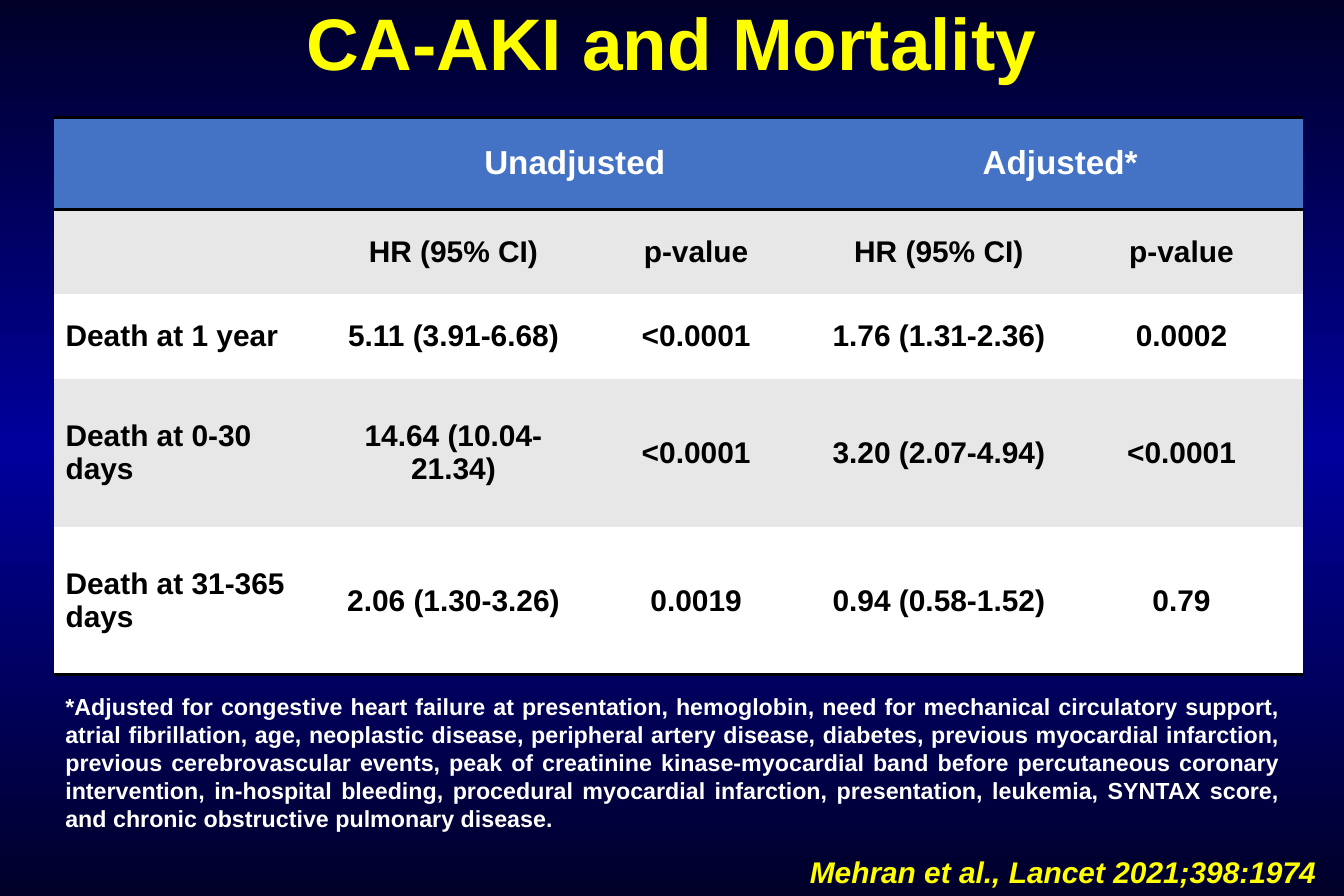
"""Build the slide on CA-AKI and mortality."""
from copy import deepcopy

from lxml.etree import SubElement
from pptx import Presentation
from pptx.dml.color import RGBColor as Rgb
from pptx.enum.text import MSO_VERTICAL_ANCHOR as Anchor, PP_PARAGRAPH_ALIGNMENT as Align
from pptx.oxml.ns import qn
from pptx.util import Cm, Pt

COLOURS = {
    "edge": "000028",
    "middle": "00009C",
    "yellow": "FFFF00",
    "white": "FFFFFF",
    "black": "000000",
    "header": "4472C4",
    "band": "E7E7E7",
}
NO_STYLE = "{2D5ABB26-0587-4C30-8999-92F81FD0307C}"
COLUMN_WIDTHS = [5.92] + [5.16] * 4
ROW_HEIGHTS = [1.96, 1.8, 1.8, 3.15, 3.15]
ROWS = [
    ["", "Unadjusted", "", "Adjusted*", ""],
    ["", "HR (95% CI)", "p-value", "HR (95% CI)", "p-value"],
    ["Death at 1 year", "5.11 (3.91-6.68)", "<0.0001", "1.76 (1.31-2.36)", "0.0002"],
    ["Death at 0-30 days", "14.64 (10.04-21.34)", "<0.0001", "3.20 (2.07-4.94)", "<0.0001"],
    ["Death at 31-365 days", "2.06 (1.30-3.26)", "0.0019", "0.94 (0.58-1.52)", "0.79"],
]
FOOTNOTE = (
    "*Adjusted for congestive heart failure at presentation, hemoglobin, need for "
    "mechanical circulatory support, atrial fibrillation, age, neoplastic disease, "
    "peripheral artery disease, diabetes, previous myocardial infarction, previous "
    "cerebrovascular events, peak of creatinine kinase-myocardial band before "
    "percutaneous coronary intervention, in-hospital bleeding, procedural myocardial "
    "infarction, presentation, leukemia, SYNTAX score, and chronic obstructive "
    "pulmonary disease."
)


def colour(name):
    """Return the named colour."""
    return Rgb.from_string(COLOURS[name])


def paint_background(page):
    """Fill the page with a vertical gradient, brightest halfway down."""
    fill = page.background.fill
    fill.gradient()
    fill.gradient_angle = 90
    stop_list = next(page.element.iter(qn("a:gsLst")))
    stop_list.append(deepcopy(stop_list[0]))
    for stop, position, name in zip(
        fill.gradient_stops, (0, 0.5, 1), ("edge", "middle", "edge")
    ):
        stop.position = position
        stop.color.rgb = colour(name)


def add_span(para, text, size, name, align, italic=False):
    """Add one bold run to a paragraph and align the paragraph."""
    para.alignment = align
    span = para.add_run()
    span.text = text
    font = span.font
    font.name, font.size, font.bold, font.italic = "Arial", Pt(size), True, italic
    font.color.rgb = colour(name)


def add_text(page, place, text, size, name, align, italic=False):
    """Add a wrapped text box and return its text frame."""
    frame = page.shapes.add_textbox(*map(Cm, place)).text_frame
    frame.word_wrap = True
    add_span(frame.paragraphs[0], text, size, name, align, italic)
    return frame


def add_border(cell, side):
    """Draw a black rule on one side of a cell."""
    line = SubElement(cell._tc.get_or_add_tcPr(), qn(f"a:{side}"), w=str(Pt(2)))
    fill = SubElement(line, qn("a:solidFill"))
    SubElement(fill, qn("a:srgbClr"), val=COLOURS["black"])


def style_cell(cell, row, column, text):
    """Give a cell its rules, fill and text."""
    if row == 0:
        add_border(cell, "lnT")
    if row in (0, len(ROWS) - 1):
        add_border(cell, "lnB")
    cell.fill.solid()
    banding = "band" if row % 2 else "white"
    cell.fill.fore_color.rgb = colour(banding if row else "header")
    cell.vertical_anchor = Anchor.MIDDLE
    if text:
        size, name = (18, "black") if row else (20, "white")
        align = Align.CENTER if column else Align.LEFT
        add_span(cell.text_frame.paragraphs[0], text, size, name, align)


def add_hazard_table(page):
    """Add the table of hazard ratios."""
    place = (1.14, 2.49, sum(COLUMN_WIDTHS), sum(ROW_HEIGHTS))
    frame = page.shapes.add_table(len(ROWS), len(COLUMN_WIDTHS), *map(Cm, place))
    table = frame.table
    table.horz_banding = False
    next(table._tbl.iter(qn("a:tableStyleId"))).text = NO_STYLE
    for column, width in zip(table.columns, COLUMN_WIDTHS):
        column.width = Cm(width)
    for row, height in zip(table.rows, ROW_HEIGHTS):
        row.height = Cm(height)
    for first in (1, 3):
        table.cell(0, first).merge(table.cell(0, first + 1))
    for row, texts in enumerate(ROWS):
        for column, text in enumerate(texts):
            style_cell(table.cell(row, column), row, column, text)


def main():
    """Build and save the deck."""
    deck = Presentation()
    deck.slide_width, deck.slide_height = Cm(28.575), Cm(19.05)
    page = deck.slides.add_slide(deck.slide_layouts[6])
    paint_background(page)
    title = add_text(
        page, (0, 0, 28.58, 2.21), "CA-AKI and Mortality", 44, "yellow", Align.CENTER
    )
    title.vertical_anchor = Anchor.MIDDLE
    title.paragraphs[0].line_spacing = Pt(40)
    add_text(page, (1.14, 14.6, 26.34, 3.25), FOOTNOTE, 14, "white", Align.JUSTIFY)
    add_hazard_table(page)
    add_text(
        page, (16.97, 18.03, 11.6, 1.02), "Mehran et al., Lancet 2021;398:1974",
        18, "yellow", Align.LEFT, italic=True,
    )
    deck.save("out.pptx")


if __name__ == "__main__":
    main()
